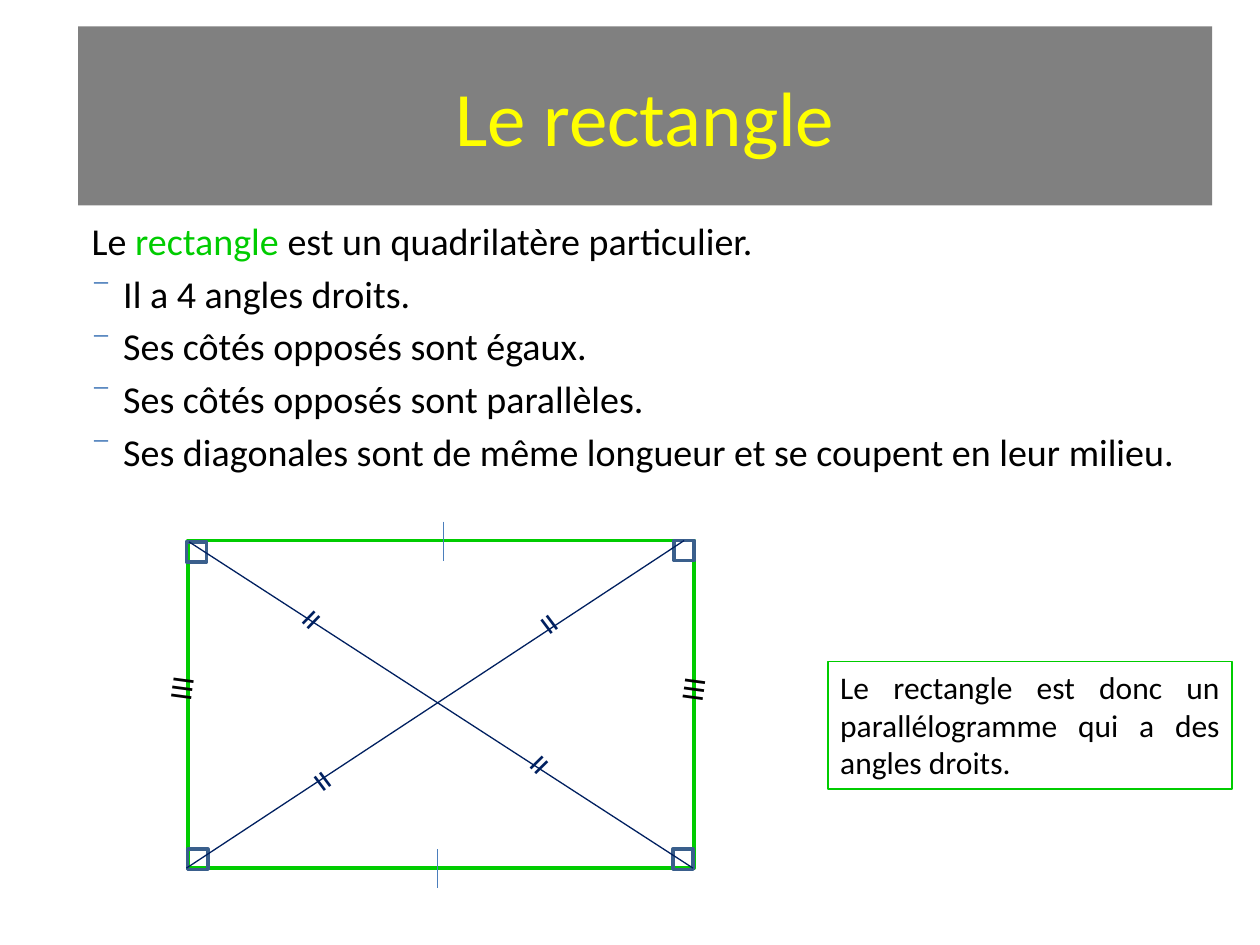
from lxml import etree
from pptx import Presentation
from pptx.dml.color import RGBColor
from pptx.enum.shapes import MSO_CONNECTOR, MSO_SHAPE
from pptx.enum.text import MSO_ANCHOR, PP_ALIGN
from pptx.oxml.ns import qn
from pptx.util import Inches, Pt

RECTANGLE = MSO_SHAPE.RECTANGLE
STRAIGHT = MSO_CONNECTOR.STRAIGHT
MIDDLE, TOP = MSO_ANCHOR.MIDDLE, MSO_ANCHOR.TOP
LEFT, CENTER, JUSTIFY = PP_ALIGN.LEFT, PP_ALIGN.CENTER, PP_ALIGN.JUSTIFY

FONT = "Calibri"
BLACK, GREEN, NAVY = "000000", "00CC00", "002060"
TICK_BLUE, CORNER_BLUE, BULLET_BLUE = "4B7EBC", "3A5F8C", "4F81BD"

PROPERTIES = [
    "Il a 4 angles droits.",
    "Ses côtés opposés sont égaux.",
    "Ses côtés opposés sont parallèles.",
    "Ses diagonales sont de même longueur et se coupent en leur milieu.",
]


def rgb(value):
    return RGBColor.from_string(value)


def inches(values):
    return [Inches(v) for v in values]


def style_run(r, size, color):
    r.font.name = FONT
    r.font.size = Pt(size)
    r.font.color.rgb = rgb(color)


def set_text(sp, text, size, color, align=LEFT, anchor=TOP):
    tf = sp.text_frame
    tf.word_wrap = True
    tf.vertical_anchor = anchor
    tf.text = text
    p = tf.paragraphs[0]
    p.alignment = align
    style_run(p.runs[0], size, color)


def add_box(s, at, fill=None, line=None, width=1):
    sp = s.shapes.add_shape(RECTANGLE, *inches(at))
    sp.shadow.inherit = False
    if fill:
        sp.fill.solid()
        sp.fill.fore_color.rgb = rgb(fill)
    else:
        sp.fill.background()
    if line:
        sp.line.color.rgb = rgb(line)
        sp.line.width = Pt(width)
    else:
        sp.line.fill.background()
    return sp


def add_line(s, start, end, color):
    line = s.shapes.add_connector(STRAIGHT, *inches(start + end))
    line.line.color.rgb = rgb(color)
    line.line.width = Pt(0.75)
    etree.SubElement(line._element.spPr, qn("a:effectLst"))


def add_mark(s, text, at, rotation, size, color):
    """Add a rotated sign that marks equal lengths."""
    sp = s.shapes.add_textbox(*inches(at))
    sp.rotation = rotation
    set_text(sp, text, size, color)


def add_bullet(p):
    pPr = p._p.get_or_add_pPr()
    pPr.set("marL", str(Inches(0.25)))
    pPr.set("indent", str(-Inches(0.25)))
    color = etree.SubElement(pPr, qn("a:buClr"))
    etree.SubElement(color, qn("a:srgbClr"), val=BULLET_BLUE)
    etree.SubElement(pPr, qn("a:buSzPct"), val="95000")
    etree.SubElement(pPr, qn("a:buChar"), char="⁻")


def add_properties(s):
    tf = s.shapes.add_textbox(*inches((0.63, 1.68, 8.94, 2.07))).text_frame
    tf.word_wrap = True
    p = tf.paragraphs[0]
    p.space_before = Pt(4)
    for text, color in [("Le ", BLACK), ("rectangle", GREEN),
                        (" est un quadrilatère particulier.", BLACK)]:
        r = p.add_run()
        r.text = text
        style_run(r, 21.7, color)
    for text in PROPERTIES:
        p = tf.add_paragraph()
        p.text = text
        p.space_before = Pt(4)
        add_bullet(p)
        style_run(p.runs[0], 21.7, BLACK)


def add_figure(s):
    add_box(s, (1.49, 4.29, 4.02, 2.6), line=GREEN, width=2)
    for x, y in [(3.52, 4.14), (3.47, 6.74)]:
        add_line(s, (x, y), (x, y + 0.31), TICK_BLUE)
    for x, y in [(5.35, 4.29), (1.48, 4.3), (1.49, 6.74), (5.34, 6.74)]:
        add_box(s, (x, y, 0.16, 0.16), line=CORNER_BLUE, width=2)
    add_line(s, (1.5, 4.3), (5.5, 6.89), NAVY)
    add_line(s, (5.43, 4.29), (1.48, 6.89), NAVY)
    for x, y, width, rotation in [(4.21, 4.67, 0.31, 53.1), (2.41, 5.92, 0.31, 53.1),
                                  (4.04, 5.87, 0.45, 135.4), (2.36, 4.67, 0.3, 134.2)]:
        add_mark(s, "=", (x, y, width, 0.5), rotation, 24, NAVY)
    for x, y in [(5.24, 5.36), (1.18, 5.35)]:
        add_mark(s, "III", (x, y, 0.55, 0.4), 97.7, 18, BLACK)


def main():
    prs = Presentation()
    prs.slide_width, prs.slide_height = Inches(10), Inches(7.5)
    s = prs.slides.add_slide(prs.slide_layouts[6])

    title = add_box(s, (0.62, 0.21, 9, 1.42), fill="808080")
    set_text(title, "Le rectangle", 44, "FFFF00", CENTER, MIDDLE)
    add_properties(s)
    add_figure(s)
    conclusion = add_box(s, (6.57, 5.25, 3.21, 1.01), line=GREEN)
    set_text(conclusion, "Le rectangle est donc un parallélogramme qui a des angles droits.",
             18, BLACK, JUSTIFY)

    prs.save("out.pptx")


if __name__ == "__main__":
    main()
